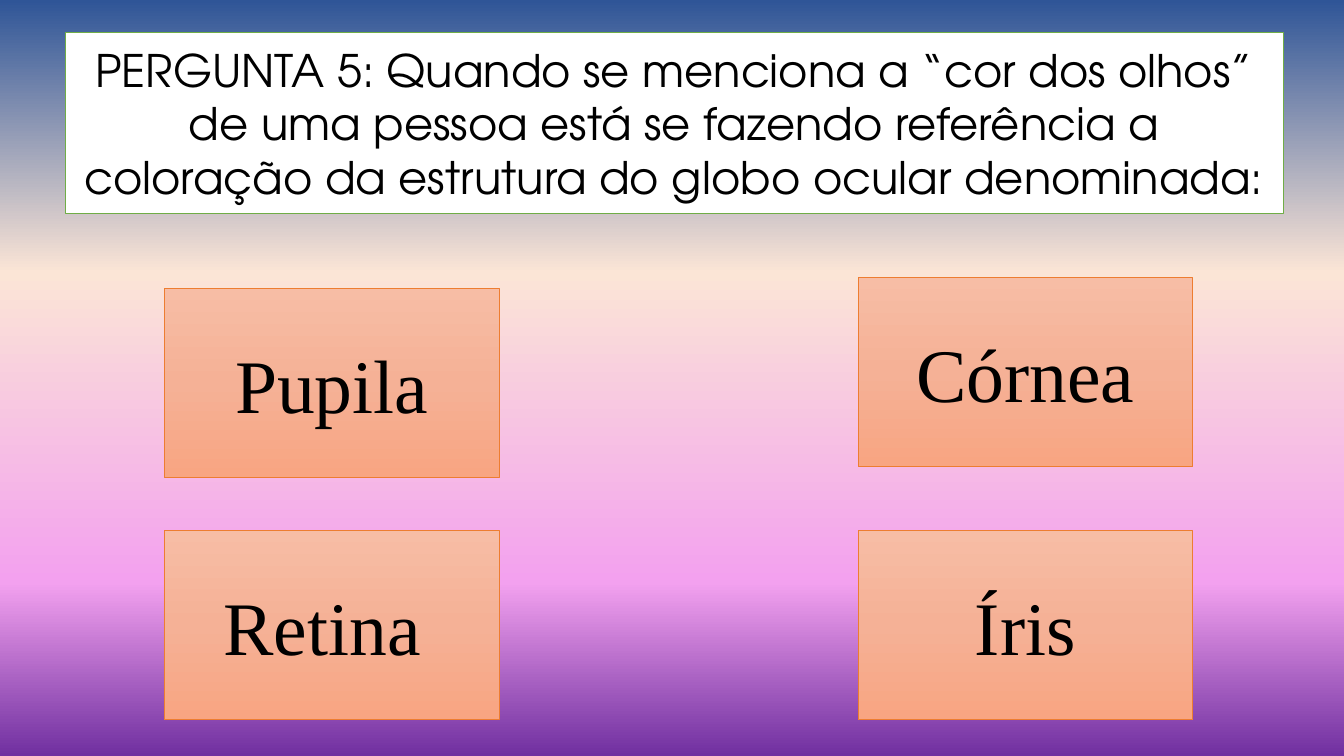
from lxml import etree
from pptx import Presentation
from pptx import util as u
from pptx.dml.color import RGBColor
from pptx.enum import shapes, text
from pptx.oxml.ns import qn

WIDTH, HEIGHT = u.Inches(13.33), u.Inches(7.5)
COLUMNS = (0.1223, 0.6384)  # left edges of the answers, as shares of the width
LOWER_ROW = 0.7013  # top edges, as shares of the height
PUPILA_TOP, CORNEA_TOP = 0.3813, 0.3667
ANSWER_SIZE = (0.249, 0.2507)

COLORS = {"text": "000000", "panel": "FFFFFF", "panel_line": "70AD47", "answer_line": "ED7D31"}
SKY = [(0, "2F5597"), (36, "FBE5D6"), (77, "F3A1EF"), (100, "7030A0")]
PEACH = [(0, "F7BDA5"), (50, "F5B196"), (100, "F8A582")]

QUESTION = (
    "PERGUNTA 5: Quando se menciona a “cor dos olhos” de uma pessoa está se "
    "fazendo referência a coloração da estrutura do globo ocular denominada:"
)
ANSWERS = [
    ("Pupila", COLUMNS[0], PUPILA_TOP),
    ("Córnea", COLUMNS[1], CORNEA_TOP),
    ("Retina ", COLUMNS[0], LOWER_ROW),
    ("Íris", COLUMNS[1], LOWER_ROW),
]


def color(name):
    return RGBColor.from_string(COLORS[name])


def fill_downwards(fill, owner, stops):
    """Give the fill of a slide or shape a top-to-bottom gradient of (percent, hex) stops."""
    fill.gradient()
    fill.gradient_angle = 270
    stop_list = owner.element.find(".//" + qn("a:gsLst"))
    for old_stop in list(stop_list):
        stop_list.remove(old_stop)
    for percent, hex_color in stops:
        stop = etree.SubElement(stop_list, qn("a:gs"), pos=str(percent * 1000))
        etree.SubElement(stop, qn("a:srgbClr"), val=hex_color)


def place(shape, left, top, width, height):
    """Position a shape by shares of the slide's size."""
    shape.left, shape.width = int(left * WIDTH), int(width * WIDTH)
    shape.top, shape.height = int(top * HEIGHT), int(height * HEIGHT)


def outline(shape, color_name, points):
    shape.line.color.rgb = color(color_name)
    shape.line.width = u.Pt(points)


def write_centred(shape, words, font_name, points):
    frame = shape.text_frame
    frame.word_wrap = True
    frame.auto_size = text.MSO_AUTO_SIZE.NONE
    frame.vertical_anchor = text.MSO_ANCHOR.MIDDLE
    paragraph = frame.paragraphs[0]
    paragraph.text = words
    paragraph.alignment = text.PP_ALIGN.CENTER
    paragraph.font.name = font_name
    paragraph.font.size = u.Pt(points)
    paragraph.font.color.rgb = color("text")


def add_question(slide):
    title = slide.shapes.title
    place(title, 0.0488, 0.0427, 0.9062, 0.24)
    title.fill.solid()
    title.fill.fore_color.rgb = color("panel")
    outline(title, "panel_line", 1)
    write_centred(title, QUESTION, "TeX Gyre Adventor", 32)


def add_answer(slide, words, left, top):
    box = slide.shapes.add_shape(shapes.MSO_SHAPE.RECTANGLE, 0, 0, 0, 0)
    place(box, left, top, *ANSWER_SIZE)
    box.shadow.inherit = False
    fill_downwards(box.fill, box, PEACH)
    outline(box, "answer_line", 0.5)
    write_centred(box, words, "Times New Roman", 54)


def main():
    presentation = Presentation()
    presentation.slide_width, presentation.slide_height = WIDTH, HEIGHT
    slide = presentation.slides.add_slide(presentation.slide_layouts.get_by_name("Title Only"))
    fill_downwards(slide.background.fill, slide, SKY)
    add_question(slide)
    for words, left, top in ANSWERS:
        add_answer(slide, words, left, top)
    presentation.save("out.pptx")


if __name__ == "__main__":
    main()
